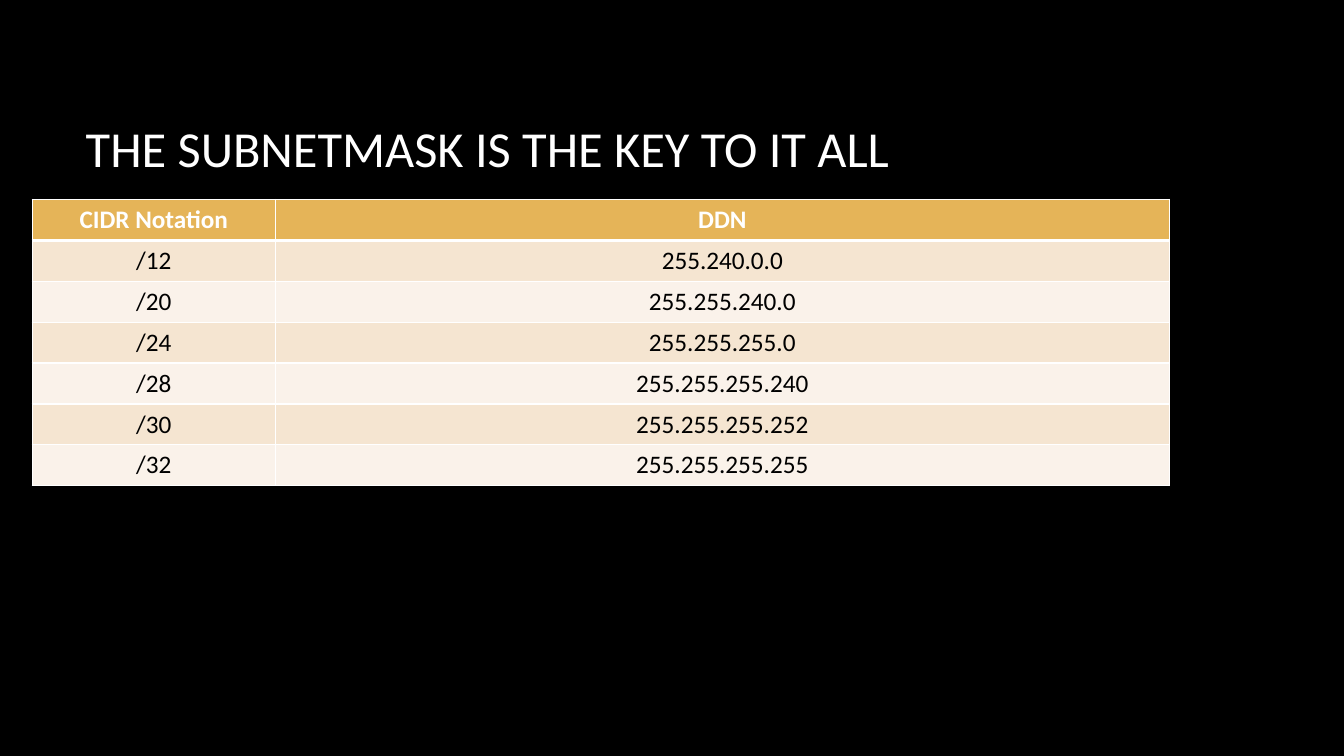
import pptx
import pptx.util
import pptx.dml.color
import pptx.enum.text
import pptx.oxml
import pptx.oxml.ns
from lxml import etree

BLACK = pptx.dml.color.RGBColor(0x00, 0x00, 0x00)
WHITE = pptx.dml.color.RGBColor(0xFF, 0xFF, 0xFF)
GOLD = pptx.dml.color.RGBColor(0xE5, 0xB4, 0x58)
SAND = pptx.dml.color.RGBColor(0xF5, 0xE5, 0xD1)
CREAM = pptx.dml.color.RGBColor(0xFA, 0xF2, 0xEA)

TITLE_FORMAT = {"name": "Calibri", "size": pptx.util.Pt(36), "bold": False}
HEADER_FORMAT = {"name": "Calibri", "size": pptx.util.Pt(18), "bold": True}
MASK_FORMAT = {"name": "Calibri", "size": pptx.util.Pt(18), "bold": False}

SUBNET_MASKS = [
    ("CIDR Notation", "DDN"),
    ("/12", "255.240.0.0"),
    ("/20", "255.255.240.0"),
    ("/24", "255.255.255.0"),
    ("/28", "255.255.255.240"),
    ("/30", "255.255.255.252"),
    ("/32", "255.255.255.255"),
]
COLUMN_WIDTHS = [pptx.util.Inches(2.41), pptx.util.Inches(8.87)]
ROW_HEIGHT = pptx.util.Inches(2.84 / len(SUBNET_MASKS))


def format_text(paragraph, font_format, color):
    for attribute, value in font_format.items():
        setattr(paragraph.font, attribute, value)
    paragraph.font.color.rgb = color


def add_border(cell, side, points):
    properties = cell._tc.get_or_add_tcPr()
    line = etree.SubElement(properties, pptx.oxml.ns.qn(f"a:ln{side}"), w=str(pptx.util.Pt(points)))
    fill = etree.SubElement(line, pptx.oxml.ns.qn("a:solidFill"))
    etree.SubElement(fill, pptx.oxml.ns.qn("a:srgbClr"), val=str(WHITE))


deck = pptx.Presentation()
deck.slide_width = pptx.util.Inches(13.33)
deck.slide_height = pptx.util.Inches(7.5)
slide = deck.slides.add_slide(deck.slide_layouts[5])
slide.background.fill.solid()
slide.background.fill.fore_color.rgb = BLACK

heading = slide.shapes.title
heading_place = {"left": 0.75, "top": 0.67, "width": 11.08, "height": 1.59}
for attribute, inches in heading_place.items():
    setattr(heading, attribute, pptx.util.Inches(inches))
heading.text_frame.text = "THE SUBNETMASK IS THE KEY TO IT ALL"
heading.text_frame.vertical_anchor = pptx.enum.text.MSO_ANCHOR.MIDDLE
heading.text_frame.paragraphs[0].alignment = pptx.enum.text.PP_ALIGN.LEFT
format_text(heading.text_frame.paragraphs[0], TITLE_FORMAT, WHITE)

masks = slide.shapes.add_table(
    len(SUBNET_MASKS), len(COLUMN_WIDTHS),
    pptx.util.Inches(0.32), pptx.util.Inches(1.98),
    sum(COLUMN_WIDTHS), ROW_HEIGHT * len(SUBNET_MASKS),
).table
for column, width in zip(masks.columns, COLUMN_WIDTHS):
    column.width = width

for row_index, entries in enumerate(SUBNET_MASKS):
    masks.rows[row_index].height = ROW_HEIGHT
    is_header = row_index == 0
    band = GOLD if is_header else SAND if row_index % 2 else CREAM
    border_points = {"L": 1, "R": 1, "T": 3 if row_index == 1 else 1, "B": 3 if is_header else 1}
    for column_index, entry in enumerate(entries):
        cell = masks.cell(row_index, column_index)
        cell.text = entry
        for side, points in border_points.items():
            add_border(cell, side, points)
        cell.fill.solid()
        cell.fill.fore_color.rgb = band
        paragraph = cell.text_frame.paragraphs[0]
        paragraph.alignment = pptx.enum.text.PP_ALIGN.CENTER
        format_text(paragraph, HEADER_FORMAT if is_header else MASK_FORMAT, WHITE if is_header else BLACK)

deck.save("out.pptx")
